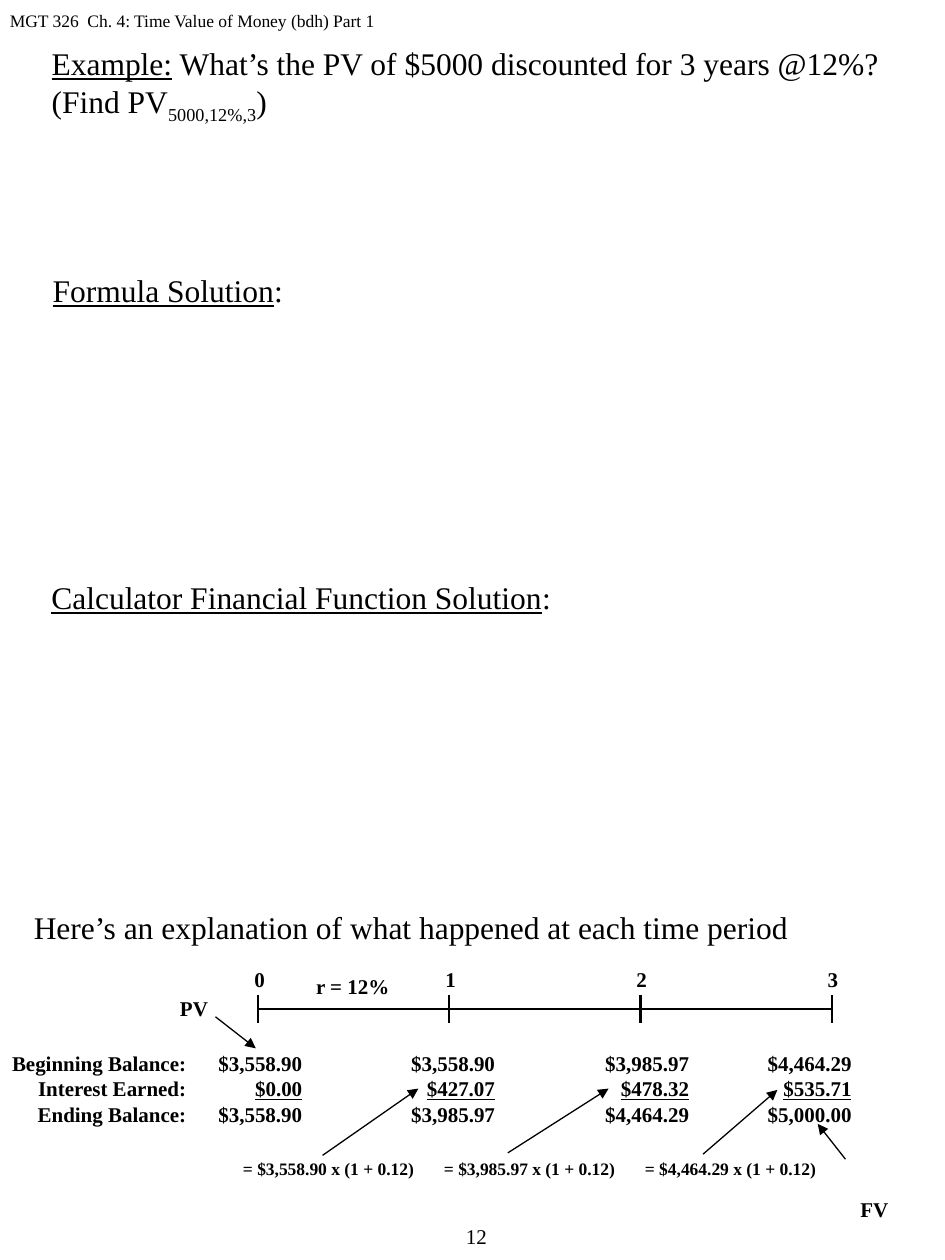
from lxml.etree import SubElement
from pptx import Presentation
from pptx.dml.color import RGBColor
from pptx.enum.shapes import MSO_CONNECTOR
from pptx.enum.text import MSO_ANCHOR, MSO_AUTO_SIZE, PP_ALIGN
from pptx.oxml.ns import qn
from pptx.util import Inches, Pt

COLORS = {"ink": "000000", "paper": "FFFFFF"}
FONT = "Times New Roman"


def style_paragraph(para, size, bold=False):
    para.font.name = FONT
    para.font.size = Pt(size)
    para.font.bold = bold
    para.font.color.rgb = RGBColor.from_string(COLORS["ink"])


def add_span(para, text, underline=False):
    span = para.add_run()
    span.text = text
    if underline:
        span.font.underline = True
    return span


def add_text(page, area, spans, size, bold=False, wrap=True):
    """Add a one-paragraph text box; spans are (text, underline) pairs."""
    box = page.shapes.add_textbox(*map(Inches, area))
    frame = box.text_frame
    frame.word_wrap = wrap
    frame.auto_size = MSO_AUTO_SIZE.SHAPE_TO_FIT_TEXT
    para = frame.paragraphs[0]
    style_paragraph(para, size, bold)
    for text, underline in spans:
        add_span(para, text, underline)
    return para


def add_label(page, area, text, size=12):
    add_text(page, area, [(text, False)], size, bold=True, wrap=False)


def add_line(page, start, end, width, arrow=False):
    line = page.shapes.add_connector(
        MSO_CONNECTOR.STRAIGHT, *map(Inches, (*start, *end)))
    line.line.color.rgb = RGBColor.from_string(COLORS["ink"])
    line.line.width = Pt(width)
    properties = line._element.spPr
    if arrow:
        SubElement(properties.find(qn("a:ln")), qn("a:tailEnd"), type="triangle")
    SubElement(properties, qn("a:effectLst"))


def set_tab_stops(para, stops):
    """Set tab stops given as (inches, alignment) pairs."""
    properties = para._p.get_or_add_pPr()
    tabs = SubElement(properties, qn("a:tabLst"))
    properties.insert(0, tabs)
    for position, align in stops:
        SubElement(tabs, qn("a:tab"), pos=str(Inches(position)), algn=align)


def fill_question(title, area):
    title.left, title.top, title.width, title.height = map(Inches, area)
    frame = title.text_frame
    frame.word_wrap = True
    frame.auto_size = MSO_AUTO_SIZE.NONE
    frame.vertical_anchor = MSO_ANCHOR.TOP
    para = frame.paragraphs[0]
    para.alignment = PP_ALIGN.LEFT
    style_paragraph(para, 18)
    add_span(para, "Example:", underline=True)
    add_span(para, " What’s the PV of $5000 discounted for 3 years @12%? (Find PV")
    subscript = add_span(para, "5000,12%,3")
    subscript._r.get_or_add_rPr().set("baseline", "-25000")
    add_span(para, ")")


def add_timeline(page, left, top, width):
    """Draw the axis with its period ticks, period numbers and rate."""
    add_line(page, (left, top), (left + width, top), 1.25)
    step = width / 3
    for period in range(4):
        x = left + period * step
        add_line(page, (x, top - 0.11), (x, top + 0.11), 1.25)
        add_label(page, (x - 0.13, top - 0.39, 0.28, 0.3), str(period))
    add_label(page, (left + 0.36, top - 0.33, 0.79, 0.3), "r = 12%")


def add_balances(page, area):
    """Write the balance rows on right-aligned tab stops."""
    label_end = 1.48
    amount_ends = (2.4, 3.93, 5.47, 6.76)
    rule_starts = (1.69, None, 4.64, 6.1)
    rows = (
        ("Beginning Balance:", "$3,558.90", "$3,558.90", "$3,985.97", "$4,464.29"),
        ("Interest Earned:", "$0.00", "$427.07", "$478.32", "$535.71"),
        ("Ending Balance:", "$3,558.90", "$3,985.97", "$4,464.29", "$5,000.00"),
    )
    box = page.shapes.add_textbox(*map(Inches, area))
    frame = box.text_frame
    frame.word_wrap = True
    frame.margin_left = frame.margin_right = 0
    for index, (label, *amounts) in enumerate(rows):
        para = frame.add_paragraph() if index else frame.paragraphs[0]
        ruled = label == "Interest Earned:"
        stops = [(label_end, "r")]
        add_span(para, "\t" + label)
        for amount, end, start in zip(amounts, amount_ends, rule_starts):
            add_span(para, "\t")
            if ruled and start:
                stops.append((start, "l"))
                amount = "\t" + amount
            stops.append((end, "r"))
            add_span(para, amount, underline=ruled)
        set_tab_stops(para, stops)
        style_paragraph(para, 12, bold=True)


def add_growth_notes(page, left, top):
    """Place the compounding formulas and their arrows to the interest row."""
    arrows = (((2.56, 9.17), (3.32, 8.64)),
              ((4.03, 9.15), (4.83, 8.64)),
              ((5.58, 9.16), (6.17, 8.65)))
    balances = ("$3,558.90", "$3,985.97", "$4,464.29")
    for index, (balance, arrow) in enumerate(zip(balances, arrows)):
        area = (left + index * 1.595, top, 1.58, 0.27)
        add_label(page, area, f"= {balance} x (1 + 0.12)", size=10)
        add_line(page, *arrow, 0.75, arrow=True)


def add_value_markers(page):
    add_label(page, (1.33, 7.85, 0.42, 0.3), "PV")
    add_line(page, (1.71, 8.07), (2.03, 8.32), 0.75, arrow=True)
    add_label(page, (6.73, 9.45, 0.42, 0.3), "FV")
    add_line(page, (6.71, 9.2), (6.49, 8.92), 0.75, arrow=True)


def main():
    deck = Presentation()
    deck.slide_width, deck.slide_height = Inches(7.5), Inches(10)
    page = deck.slides.add_slide(deck.slide_layouts[5])
    page.background.fill.solid()
    page.background.fill.fore_color.rgb = RGBColor.from_string(COLORS["paper"])

    add_text(page, (-0.02, 0.03, 4.64, 0.3),
             [("MGT 326  Ch. 4: Time Value of Money (bdh) Part 1", False)], 10)
    number = add_text(page, (3.19, 9.66, 1.18, 0.32), [("12", False)], 12)
    number.alignment = PP_ALIGN.CENTER

    fill_question(page.shapes.title, (0.31, 0.3, 7.19, 0.71))
    add_text(page, (0.32, 2.1, 2.05, 0.4),
             [("Formula Solution", True), (":", False)], 18, wrap=False)
    add_text(page, (0.31, 4.54, 4.93, 0.4),
             [("Calculator Financial Function Solution", True), (":", False)], 18)
    add_text(page, (0.17, 7.16, 7.33, 0.4),
             [("Here’s an explanation of what happened at each time period", False)], 18)

    add_timeline(page, 2.05, 8.01, 4.55)
    add_balances(page, (0, 8.29, 6.87, 0.7))
    add_growth_notes(page, 1.83, 9.14)
    add_value_markers(page)
    deck.save("out.pptx")


if __name__ == "__main__":
    main()
